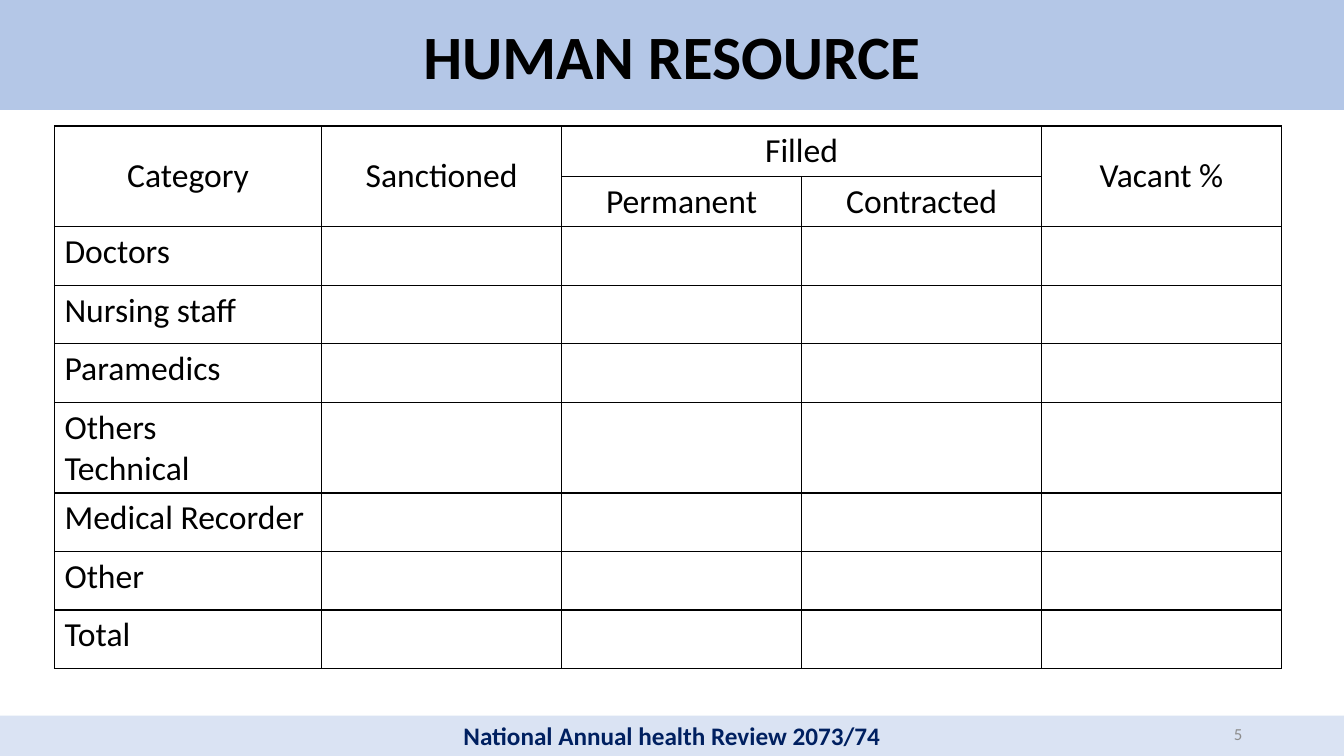
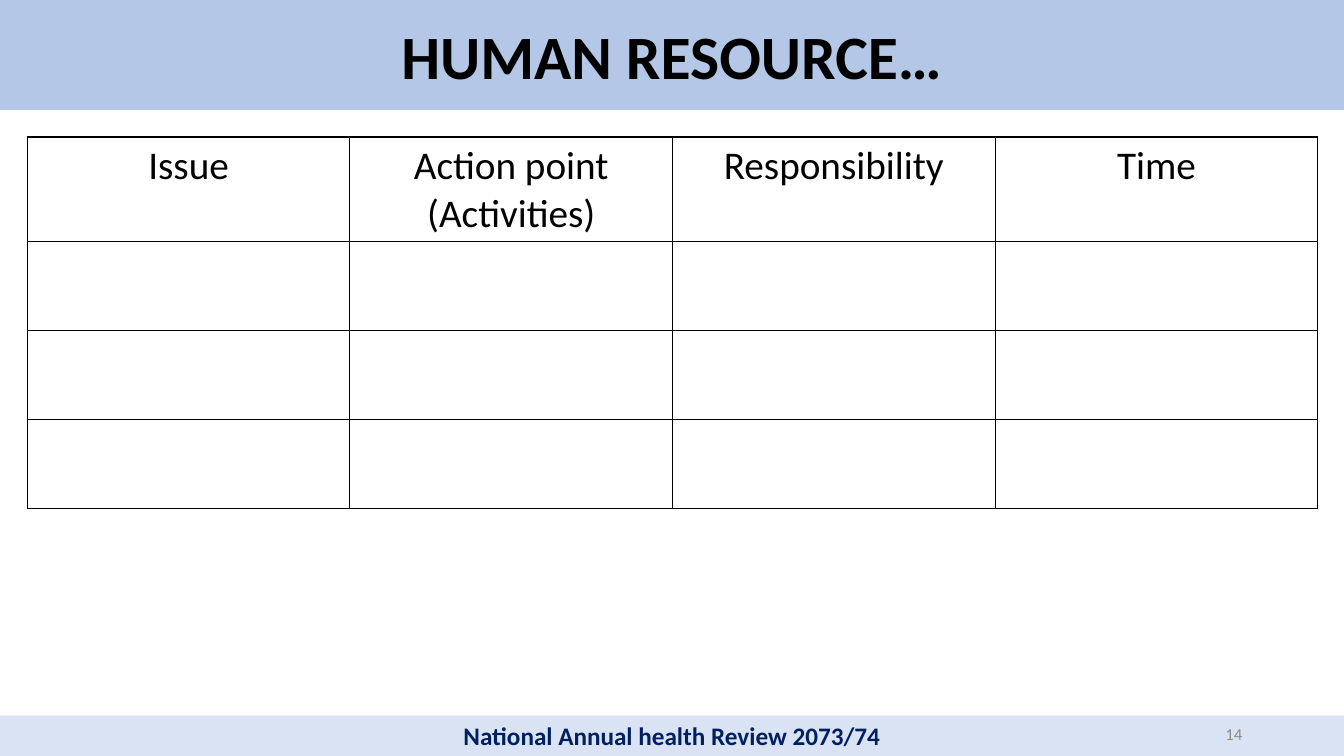
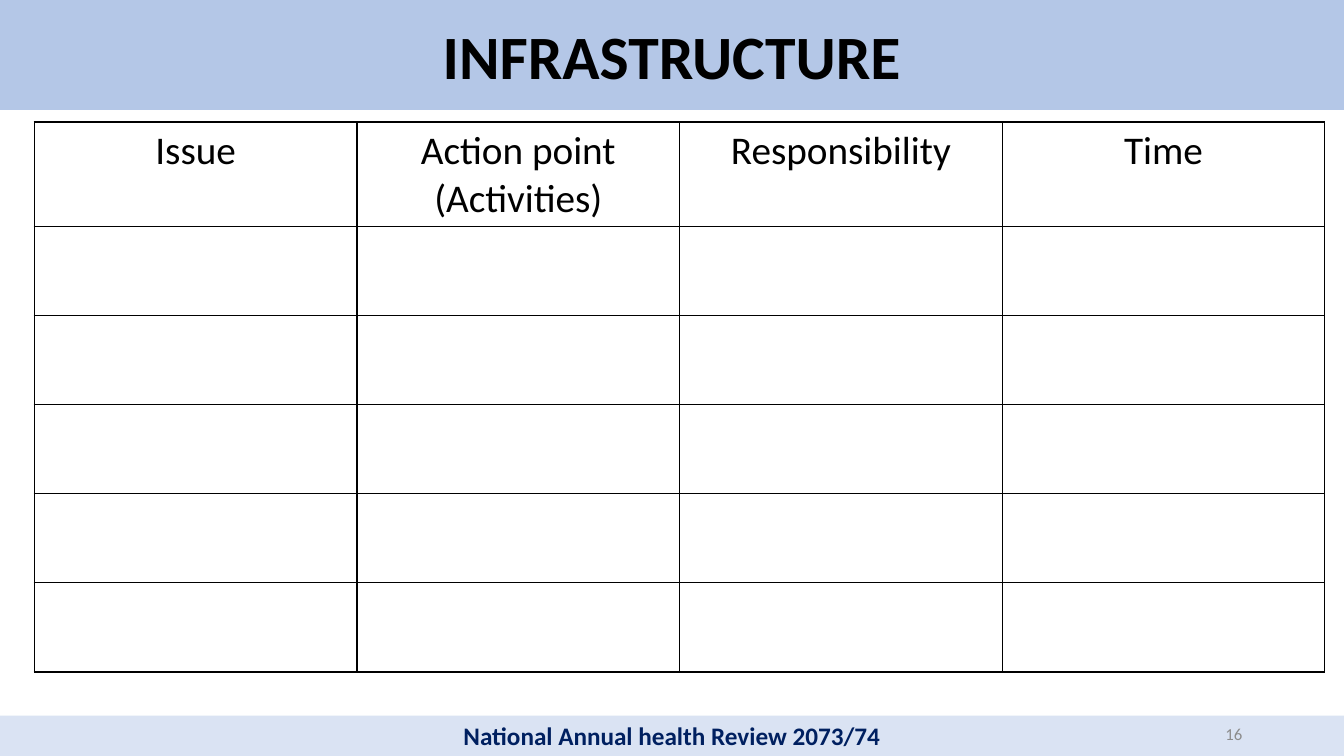
from lxml import etree
from pptx import Presentation
from pptx.dml.color import RGBColor
from pptx.enum import shapes, text
from pptx.oxml import ns
from pptx.util import Inches, Pt

HUES = {"title": "B4C7E7", "foot": "DAE3F3", "navy": "002060",
        "black": "000000", "grey": "8C8C8C"}
FONT = "Calibri"
WIDE, HIGH = 13.33, 7.5
LEFT, MID, RIGHT = text.PP_ALIGN.LEFT, text.PP_ALIGN.CENTER, text.PP_ALIGN.RIGHT
TOP, CENTRE = text.MSO_ANCHOR.TOP, text.MSO_ANCHOR.MIDDLE


def write(frame, words, size=24, hue="black", bold=False, align=MID):
    """Fill a text frame, one paragraph for each line of words."""
    frame.word_wrap = True
    for i, line in enumerate(words.split("\n")):
        para = frame.paragraphs[0] if i == 0 else frame.add_paragraph()
        para.alignment = align
        run = para.add_run()
        run.text = line
        font = run.font
        font.name, font.size, font.bold = FONT, Pt(size), bold
        font.color.rgb = RGBColor.from_string(HUES[hue])


def add_band(slide, box, fill, words, anchor=CENTRE, **style):
    band = slide.shapes.add_shape(shapes.MSO_SHAPE.RECTANGLE, *map(Inches, box))
    band.shadow.inherit = False
    band.fill.solid()
    band.fill.fore_color.rgb = RGBColor.from_string(HUES[fill])
    band.line.fill.background()
    band.text_frame.vertical_anchor = anchor
    write(band.text_frame, words, **style)


def add_number(slide, box, number):
    label = slide.shapes.add_textbox(*map(Inches, box))
    label.text_frame.vertical_anchor = CENTRE
    write(label.text_frame, str(number), size=12, hue="grey", align=RIGHT)


def add_frame(deck, title, number):
    """Add a slide with its title band, footer band and number."""
    slide = deck.slides.add_slide(deck.slide_layouts[6])
    add_band(slide, (0, 7.1, WIDE, 0.4), "foot",
             "National Annual health Review 2073/74",
             anchor=TOP, size=18, hue="navy", bold=True)
    add_band(slide, (0, 0, WIDE, 1.09), "title", title, size=44, bold=True)
    add_number(slide, (9.42, 7.08, 3, 0.4), number)
    return slide


def rule_cell(cell):
    """Draw thin black borders round a cell and clear its fill."""
    props = cell._tc.get_or_add_tcPr()
    for side in ("lnL", "lnR", "lnT", "lnB"):
        line = etree.SubElement(props, ns.qn("a:" + side), w=str(Pt(1)))
        fill = etree.SubElement(line, ns.qn("a:solidFill"))
        etree.SubElement(fill, ns.qn("a:srgbClr"), val=HUES["black"])
    cell.fill.background()


def add_grid(slide, left, top, cols, rows):
    """Add an empty ruled table from its column widths and row heights."""
    box = (left, top, sum(cols), sum(rows))
    grid = slide.shapes.add_table(len(rows), len(cols), *map(Inches, box)).table
    grid.first_row = grid.horz_banding = False
    for col, width in zip(grid.columns, cols):
        col.width = Inches(width)
    for row, height in zip(grid.rows, rows):
        row.height = Inches(height)
    for cell in grid.iter_cells():
        rule_cell(cell)
    return grid


def add_staff(slide, left, top):
    """Add the staffing table, with a two-row head."""
    jobs = ["Doctors", "Nursing staff", "Paramedics", "Others\nTechnical",
            "Medical Recorder", "Other", "Total"]
    rows = [0.5, 0.5] + [0.9 if "\n" in job else 0.58 for job in jobs]
    grid = add_grid(slide, left, top, [2.65] + [2.38] * 4, rows)
    heads = [(0, 0, 1, 0, "Category"), (0, 1, 1, 1, "Sanctioned"),
             (0, 2, 0, 3, "Filled"), (0, 4, 1, 4, "Vacant %"),
             (1, 2, 1, 2, "Permanent"), (1, 3, 1, 3, "Contracted")]
    for row, col, end_row, end_col, words in heads:
        cell = grid.cell(row, col)
        if (row, col) != (end_row, end_col):
            cell.merge(grid.cell(end_row, end_col))
        cell.vertical_anchor = CENTRE
        write(cell.text_frame, words)
    for row, job in enumerate(jobs, 2):
        write(grid.cell(row, 0).text_frame, job, align=LEFT)


def add_plan(slide, left, top, count):
    """Add an action plan table with a number of blank rows."""
    heads = ["Issue", "Action point (Activities)", "Responsibility", "Time"]
    grid = add_grid(slide, left, top, [3.2] * len(heads),
                    [1.03] + [0.885] * count)
    for col, words in enumerate(heads):
        cell = grid.cell(0, col)
        cell.margin_left = cell.margin_right = Inches(0.08)
        write(cell.text_frame, words, size=28)


def main():
    deck = Presentation()
    deck.slide_width, deck.slide_height = Inches(WIDE), Inches(HIGH)
    add_staff(add_frame(deck, "HUMAN RESOURCE", 5), 0.54, 1.25)
    add_plan(add_frame(deck, "HUMAN RESOURCE…", 14), 0.27, 1.36, 3)
    add_plan(add_frame(deck, "INFRASTRUCTURE", 16), 0.34, 1.21, 5)
    deck.save("out.pptx")


if __name__ == "__main__":
    main()
